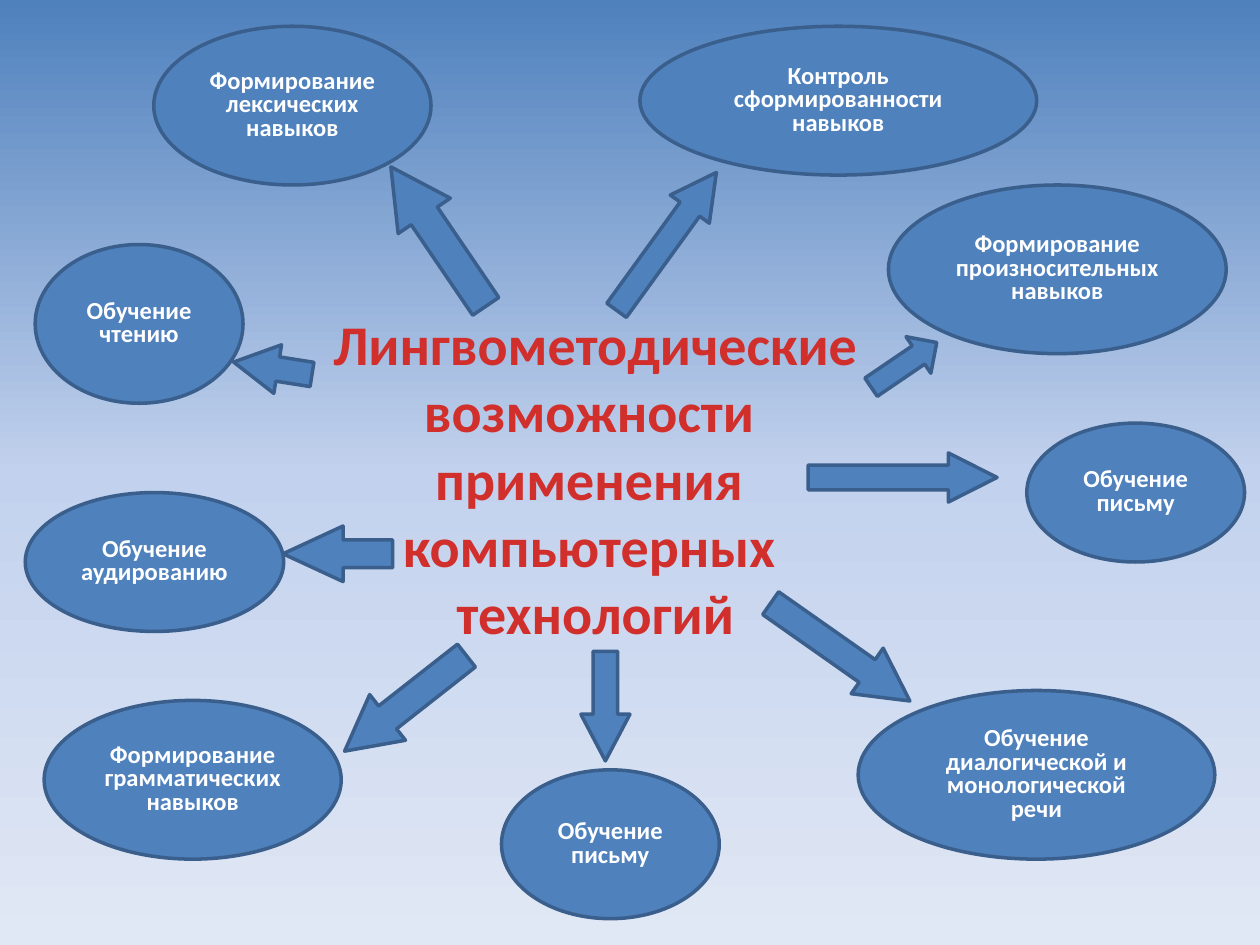
import copy

import pptx
import pptx.dml.color
import pptx.enum.shapes
import pptx.enum.text
import pptx.util

Cm, Pt = pptx.util.Cm, pptx.util.Pt
SHAPE = pptx.enum.shapes.MSO_SHAPE
CENTER = pptx.enum.text.PP_ALIGN.CENTER
BLUE, OUTLINE, WHITE, RED = "4F81BD", "3A5F8C", "FFFFFF", "D02F2C"
SKY = [(0, BLUE), (0.5, "C2D1ED"), (1, "E1E8F5")]

TITLE_BOX = (4.5, 6.12, 15.01, 7.09)
TITLE = [
    "Лингвометодические возможности ",
    "применения ",
    "компьютерных ",
    "технологий",
]

SKILLS = [
    ("Формирование лексических навыков", (3.1, 0.53, 5.59, 3.2)),
    ("Обучение чтению", (0.71, 4.93, 4.19, 3.2)),
    ("Формирование грамматических навыков", (0.89, 14.12, 5.99, 3.2)),
    ("Формирование произносительных навыков", (17.91, 3.73, 6.81, 3.4)),
    ("Обучение письму", (10.11, 15.52, 4.39, 3)),
    ("Контроль сформированности навыков", (12.9, 0.53, 8, 3)),
    ("Обучение аудированию", (0.51, 9.93, 5.21, 2.8)),
    ("Обучение письму", (20.7, 8.53, 4.39, 2.8)),
    ("Обучение диалогической и монологической речи", (17.3, 13.92, 7.19, 3.4)),
]

ARROWS = [
    (SHAPE.DOWN_ARROW, (8.2, 3.07, 1.27, 3.4), 145.8, 0.94),
    (SHAPE.DOWN_ARROW, (12.95, 3.15, 0.97, 3.43), 215.9, 0.94),
    (SHAPE.LEFT_ARROW, (4.7, 6.93, 1.6, 0.99), 9, 0.91),
    (SHAPE.DOWN_ARROW, (6.25, 10.06, 1.12, 2.21), 90, 1.08),
    (SHAPE.DOWN_ARROW, (17.7, 7.72, 0.99, 3.81), 270, 0.99),
    (SHAPE.DOWN_ARROW, (7.59, 12.62, 1.17, 3.12), 51.9, 0.94),
    (SHAPE.DOWN_ARROW, (11.71, 13.13, 0.99, 2.21), 0, 0.95),
    (SHAPE.DOWN_ARROW, (16.38, 11.43, 1.12, 3.43), 305.1, 0.94),
    (SHAPE.LEFT_ARROW, (17.42, 6.91, 1.6, 0.89), 145.8, 0.5),
]


def color(value):
    """Turn a hex string into a colour."""
    return pptx.dml.color.RGBColor.from_string(value)


def paint_sky(slide):
    """Fill the background with a vertical three-stop gradient."""
    fill = slide.background.fill
    fill.gradient()
    fill.gradient_angle = 270
    first = fill._fill._gradFill.gsLst[0]
    first.addnext(copy.deepcopy(first))
    for stop, (position, value) in zip(fill.gradient_stops, SKY):
        stop.position = position
        stop.color.rgb = color(value)


def add_figure(slide, kind, box):
    """Add an outlined blue preset shape in the given box."""
    figure = slide.shapes.add_shape(kind, *map(Cm, box))
    figure.shadow.inherit = False
    figure.fill.solid()
    figure.fill.fore_color.rgb = color(BLUE)
    figure.line.color.rgb = color(OUTLINE)
    figure.line.width = Pt(2)
    return figure


def write(paragraph, text, size, value):
    """Add one bold centred run to a paragraph."""
    paragraph.alignment = CENTER
    run = paragraph.add_run()
    run.text = text
    run.font.name = "Calibri"
    run.font.size = Pt(size)
    run.font.bold = True
    run.font.color.rgb = color(value)


def add_skill(slide, text, box):
    """Add an ellipse that names one skill."""
    frame = add_figure(slide, SHAPE.OVAL, box).text_frame
    frame.word_wrap = True
    frame.vertical_anchor = pptx.enum.text.MSO_ANCHOR.MIDDLE
    frame.paragraphs[0].line_spacing = 0.8
    write(frame.paragraphs[0], text, 14, WHITE)


def add_title(slide, lines, box):
    """Add the central title, one paragraph for each line."""
    frame = slide.shapes.add_textbox(*map(Cm, box)).text_frame
    frame.word_wrap = True
    frame.auto_size = pptx.enum.text.MSO_AUTO_SIZE.SHAPE_TO_FIT_TEXT
    for number, line in enumerate(lines):
        paragraph = frame.add_paragraph() if number else frame.paragraphs[0]
        write(paragraph, line, 32, RED)


def add_arrow(slide, kind, box, angle, head):
    """Add a block arrow turned from the title towards a skill."""
    arrow = add_figure(slide, kind, box)
    arrow.rotation = angle
    arrow.adjustments[0] = 0.5
    arrow.adjustments[1] = head


def main():
    """Build the slide and save it."""
    deck = pptx.Presentation()
    deck.slide_width, deck.slide_height = Cm(25.4), Cm(19.05)
    slide = deck.slides.add_slide(deck.slide_layouts[6])
    paint_sky(slide)
    for text, box in SKILLS:
        add_skill(slide, text, box)
    add_title(slide, TITLE, TITLE_BOX)
    for arrow in ARROWS:
        add_arrow(slide, *arrow)
    deck.save("out.pptx")


if __name__ == "__main__":
    main()
